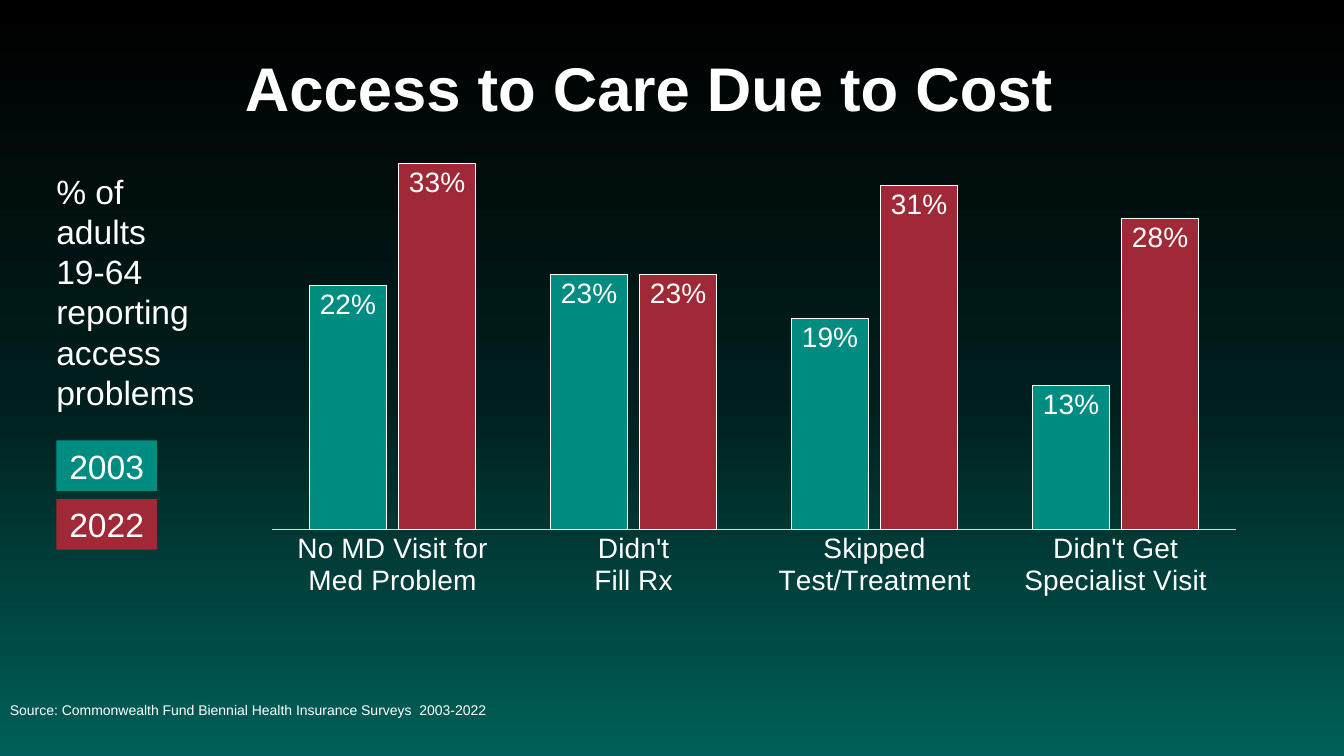
from copy import deepcopy
from dataclasses import dataclass

from lxml.etree import SubElement
from pptx import Presentation
from pptx.chart.data import CategoryChartData as ChartData
from pptx.dml.color import RGBColor as Rgb
from pptx.enum.chart import XL_CHART_TYPE as ChartType
from pptx.enum.chart import XL_LABEL_POSITION as LabelPosition
from pptx.enum.chart import XL_TICK_MARK as TickMark
from pptx.enum.shapes import MSO_SHAPE as Shape
from pptx.enum.text import MSO_ANCHOR as Anchor
from pptx.enum.text import PP_ALIGN as Align
from pptx.oxml.ns import qn
from pptx.util import Cm, Pt


@dataclass(frozen=True)
class Theme:
    """Colours, font and type sizes of the slide."""
    white: Rgb = Rgb.from_string("FFFFFF")
    axis: Rgb = Rgb.from_string("D9D9D9")
    teal: Rgb = Rgb.from_string("008C81")
    red: Rgb = Rgb.from_string("9F2936")
    backdrop: tuple = ((0, "000000"), (0.52, "001E1C"), (1, "006059"))
    font: str = "Arial"
    title: int = 44
    body: int = 24
    chart: int = 20
    source: int = 10


THEME = Theme()
YEARS = {"2003": (THEME.teal, (0.22, 0.23, 0.19, 0.13)),
         "2022": (THEME.red, (0.33, 0.23, 0.31, 0.28))}
PROBLEMS = ("No MD Visit for Med Problem", "Didn't\nFill Rx",
            "Skipped\nTest/Treatment", "Didn't Get\nSpecialist Visit")


def apply(target, values):
    """Set each named attribute of the target."""
    for name, value in values.items():
        setattr(target, name, value)


def style_font(font, size, bold=False):
    """Give a font the theme's face and colour."""
    apply(font, {"name": THEME.font, "size": Pt(size), "bold": bold})
    font.color.rgb = THEME.white


def style_line(line, color, width):
    """Give a line its colour and width."""
    line.color.rgb = color
    line.width = Pt(width)


def write_text(shape, text, size, bold=False, anchor=Anchor.TOP, **para_format):
    """Write one formatted paragraph into a shape."""
    frame = shape.text_frame
    apply(frame, {"word_wrap": True, "vertical_anchor": anchor})
    para = frame.paragraphs[0]
    apply(para, {"alignment": Align.LEFT, **para_format})
    span = para.add_run()
    span.text = text
    style_font(span.font, size, bold)


def paint_background(page):
    """Fill the page with a vertical gradient of three stops."""
    fill = page.background.fill
    fill.gradient()
    fill.gradient_angle = 270
    stop_list = page.element.find(".//" + qn("a:gsLst"))
    stop_list.append(deepcopy(stop_list[0]))
    for stop, (position, color) in zip(fill.gradient_stops, THEME.backdrop):
        stop.position = position
        stop.color.rgb = Rgb.from_string(color)


def place_plot(chart, **fractions):
    """Fix the inner plot area as fractions of the chart."""
    area = chart.element.find(".//" + qn("c:plotArea"))
    for old in area.findall(qn("c:layout")):
        area.remove(old)
    layout = SubElement(area, qn("c:layout"))
    area.insert(0, layout)
    manual = SubElement(layout, qn("c:manualLayout"))
    settings = {"layoutTarget": "inner", "xMode": "edge", "yMode": "edge", **fractions}
    for name, value in settings.items():
        SubElement(manual, qn("c:" + name)).set("val", str(value))


def add_access_chart(page):
    """Add the clustered columns of access problems."""
    data = ChartData(number_format="0%")
    data.categories = PROBLEMS
    for year, (_, shares) in YEARS.items():
        data.add_series(year, shares)
    chart = page.shapes.add_chart(ChartType.COLUMN_CLUSTERED, Cm(6.81), Cm(1.02),
                                  Cm(24.74), Cm(15.37), data).chart
    apply(chart, {"has_legend": False, "has_title": False})
    style_font(chart.font, THEME.chart)
    apply(chart.value_axis, {"visible": False, "has_major_gridlines": False,
                             "minimum_scale": 0, "maximum_scale": 0.44,
                             "major_unit": 0.1})
    axis = chart.category_axis
    apply(axis, {"major_tick_mark": TickMark.NONE, "minor_tick_mark": TickMark.NONE})
    style_font(axis.tick_labels.font, THEME.chart)
    style_line(axis.format.line, THEME.axis, 0.75)
    plot = chart.plots[0]
    apply(plot, {"gap_width": 98, "overlap": -16, "vary_by_categories": False})
    for series, (color, _) in zip(plot.series, YEARS.values()):
        series.format.fill.solid()
        series.format.fill.fore_color.rgb = color
        style_line(series.format.line, THEME.white, 0.5)
        labels = series.data_labels
        apply(labels, {"show_value": True, "position": LabelPosition.INSIDE_END,
                       "number_format": "0%", "number_format_is_linked": False})
        style_font(labels.font, THEME.chart)
    place_plot(chart, x=0.002, y=0.001, w=0.982, h=0.801)


def add_title(page, text):
    """Place the title in front of the chart."""
    title = page.shapes.title
    apply(title, {"left": Cm(5.92), "top": Cm(1.02),
                  "width": Cm(25.63), "height": Cm(2.59)})
    title.element.getparent().append(title.element)
    write_text(title, text, THEME.title, True, Anchor.MIDDLE, line_spacing=0.9)


def add_note(page, text, size, left, top, width, height, **text_format):
    """Add a wrapped text box."""
    box = page.shapes.add_textbox(Cm(left), Cm(top), Cm(width), Cm(height))
    write_text(box, text, size, **text_format)


def add_year_key(page, year, color, top):
    """Add a coloured box that names a year."""
    box = page.shapes.add_shape(Shape.RECTANGLE, Cm(1.42), Cm(top), Cm(2.54), Cm(1.27))
    box.shadow.inherit = False
    box.fill.solid()
    box.fill.fore_color.rgb = color
    box.line.fill.background()
    write_text(box, year, THEME.body, alignment=Align.CENTER)


def main():
    """Build and save the slide."""
    deck = Presentation()
    apply(deck, {"slide_width": Cm(33.87), "slide_height": Cm(19.05)})
    page = deck.slides.add_slide(deck.slide_layouts.get_by_name("Title Only"))
    paint_background(page)
    add_access_chart(page)
    add_title(page, "Access to Care Due to Cost")
    add_note(page, "Source: Commonwealth Fund Biennial Health Insurance Surveys  2003-2022",
             THEME.source, 0, 16.71, 23.62, 2.34, anchor=Anchor.MIDDLE)
    add_note(page, "% of adults 19-64 reporting access problems",
             THEME.body, 1.17, 4.17, 4.17, 6.4)
    for row, (year, (color, _)) in enumerate(YEARS.items()):
        add_year_key(page, year, color, 11.1 + 1.48 * row)
    deck.save("out.pptx")


if __name__ == "__main__":
    main()
